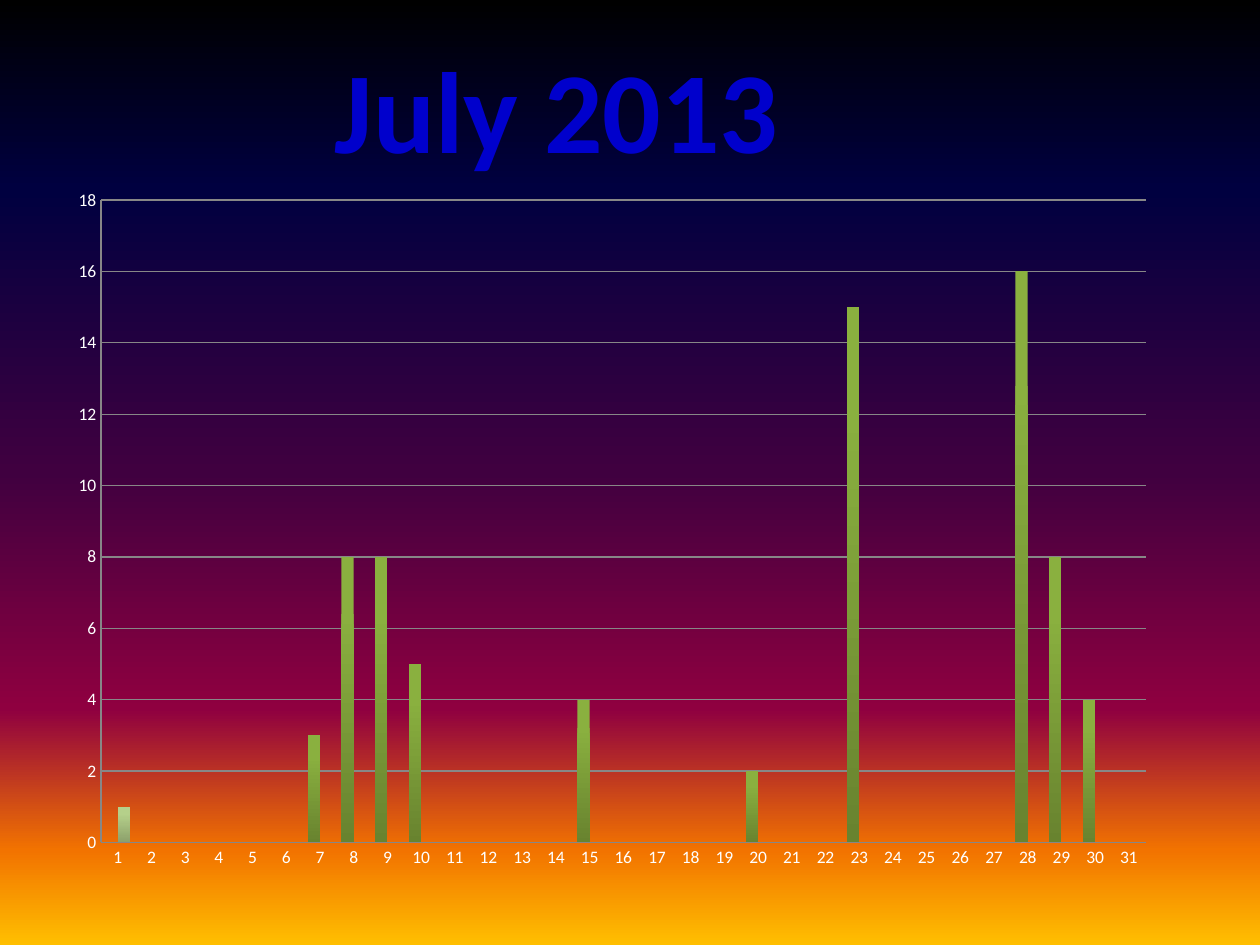
from dataclasses import dataclass
from typing import Any

from lxml import etree
from pptx import Presentation
from pptx import util as u
from pptx.chart.data import CategoryChartData
from pptx.dml.color import RGBColor
from pptx.enum import chart as kinds, text
from pptx.oxml import parse_xml
from pptx.oxml.ns import nsdecls, qn


@dataclass(frozen=True)
class Stop:
    position: int
    color: str


@dataclass(frozen=True)
class Bars:
    name: str
    values: dict[int, int]
    days: range
    stops: tuple[Stop, ...]


@dataclass(frozen=True)
class Area:
    left: float
    top: float
    width: float
    height: float

    def lengths(self) -> list[u.Cm]:
        return [u.Cm(n) for n in (self.left, self.top, self.width, self.height)]


DAYS = range(1, 32)
SKY = (Stop(0, "000000"), Stop(20, "000040"), Stop(50, "400040"),
       Stop(75, "8F0040"), Stop(90, "F27300"), Stop(100, "FFBF00"))
SERIES = (
    Bars("Series 1",
         {7: 3, 8: 8, 9: 8, 10: 5, 15: 4, 20: 2, 23: 15, 28: 16, 29: 8, 30: 4},
         DAYS, (Stop(0, "8AB03F"), Stop(20, "8AB03F"), Stop(100, "68832F"))),
    Bars("Series 2", {1: 1}, range(1, 2),
         (Stop(0, "B5D08A"), Stop(20, "B5D08A"), Stop(100, "8CA06B"))),
)
TITLE_AREA = Area(6.45, 0.64, 9.55, 3.07)
CHART_AREA = Area(1.07, 3.61, 22.43, 14.17)
PLOT_LAYOUT = {"layoutTarget": "inner", "xMode": "edge", "yMode": "edge",
               "x": 0.043, "y": 0.03, "w": 0.939, "h": 0.914}


def color(value: str) -> RGBColor:
    return RGBColor.from_string(value)


def apply(target: Any, values: dict[str, Any]) -> None:
    for name, value in values.items():
        setattr(target, name, value)


def fill_gradient(fill: Any, root: Any, stops: tuple[Stop, ...]) -> None:
    fill.gradient()
    fill.gradient_angle = 270
    stop_list = list(root.iter(qn("a:gsLst")))[-1]
    for old in list(stop_list):
        stop_list.remove(old)
    for stop in stops:
        mark = etree.SubElement(stop_list, qn("a:gs"), pos=str(stop.position * 1000))
        etree.SubElement(mark, qn("a:srgbClr"), val=stop.color)


def add_title(page: Any, words: str) -> None:
    box = page.shapes.add_textbox(*TITLE_AREA.lengths())
    apply(box.text_frame, {"word_wrap": False,
                           "auto_size": text.MSO_AUTO_SIZE.SHAPE_TO_FIT_TEXT})
    para = box.text_frame.paragraphs[0]
    para.alignment = text.PP_ALIGN.CENTER
    span = para.add_run()
    span.text = words
    apply(span.font, {"name": "Calibri", "size": u.Pt(66), "bold": True})
    span.font.color.rgb = color("0000CC")
    span.font.fill.solid()
    span.font.fill.fore_color.rgb = color("0000CC")
    outline = parse_xml(
        f'<a:ln {nsdecls("a")} w="{u.Pt(1.4)}"><a:solidFill>'
        '<a:srgbClr val="FFFFFF"/></a:solidFill></a:ln>')
    span.font.fill  
    span._r.get_or_add_rPr().insert(0, outline)


def style_axis(axis: Any, values: dict[str, Any]) -> None:
    apply(axis, {"major_tick_mark": kinds.XL_TICK_MARK.NONE,
                 "minor_tick_mark": kinds.XL_TICK_MARK.NONE, **values})
    lines = [axis.format.line]
    if axis.has_major_gridlines:
        lines.append(axis.major_gridlines.format.line)
    for line in lines:
        line.color.rgb = color("878787")
        line.width = u.Pt(0.75)


def place_plot(chart: Any) -> None:
    area = next(chart.element.iter(qn("c:plotArea")))
    for old in area.findall(qn("c:layout")):
        area.remove(old)
    layout = etree.Element(qn("c:layout"))
    manual = etree.SubElement(layout, qn("c:manualLayout"))
    for name, value in PLOT_LAYOUT.items():
        etree.SubElement(manual, qn(f"c:{name}"), val=str(value))
    area.insert(0, layout)


def add_day_chart(page: Any) -> None:
    data = CategoryChartData()
    data.categories = [str(day) for day in DAYS]
    for bars in SERIES:
        data.add_series(bars.name, [bars.values.get(day, 0) if day in bars.days
                                    else None for day in DAYS])
    chart = page.shapes.add_chart(kinds.XL_CHART_TYPE.COLUMN_CLUSTERED,
                                  *CHART_AREA.lengths(), data).chart
    apply(chart, {"has_legend": False, "has_title": False})
    apply(chart.font, {"name": "Calibri", "size": u.Pt(10)})
    chart.font.color.rgb = color("FFFFFF")
    plot = chart.plots[0]
    apply(plot, {"gap_width": 75, "overlap": 0, "vary_by_categories": False})
    for series, bars in zip(plot.series, SERIES):
        fill_gradient(series.format.fill, chart.element, bars.stops)
    style_axis(chart.category_axis, {"has_major_gridlines": False})
    style_axis(chart.value_axis, {"has_major_gridlines": True, "minimum_scale": 0,
                                  "maximum_scale": 18, "major_unit": 2})
    place_plot(chart)


def main() -> None:
    deck = Presentation()
    apply(deck, {"slide_width": u.Cm(25.4), "slide_height": u.Cm(19.05)})
    page = deck.slides.add_slide(deck.slide_layouts[6])
    fill_gradient(page.background.fill, page.element, SKY)
    add_title(page, "July 2013")
    add_day_chart(page)
    deck.save("out.pptx")


if __name__ == "__main__":
    main()
